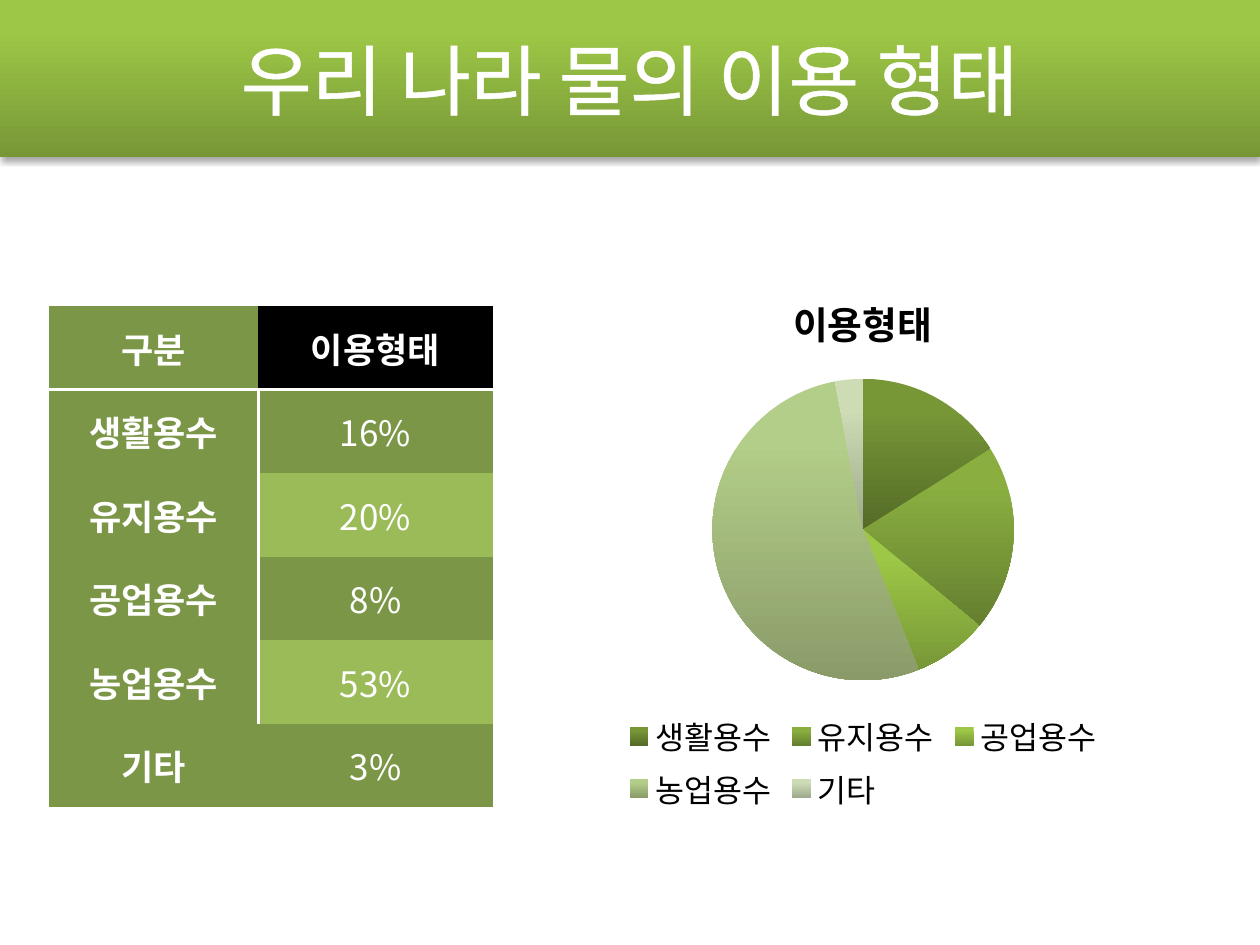
from dataclasses import dataclass

import pptx
import pptx.chart.data
import pptx.dml.color
import pptx.enum.chart
import pptx.enum.shapes
import pptx.enum.text
import pptx.oxml
import pptx.oxml.ns
import pptx.util
from pptx.util import Inches

FONT = "Noto Sans CJK KR"
PLAIN_TABLE = "{2D5ABB26-0587-4C30-8999-92F81FD0307C}"
NS = pptx.oxml.ns.nsdecls("a")
COLORS = {
    "white": "FFFFFF",
    "black": "000000",
    "banner_top": "9DC746",
    "olive": "7C9647",
    "band": "9BBB59",
    "banner_bottom": "779737",
}


@dataclass(frozen=True)
class WaterUse:
    name: str
    percent: int
    top_color: str
    bottom_color: str


USES = [
    WaterUse("생활용수", 16, "779737", "556B27"),
    WaterUse("유지용수", 20, "8AAF40", "657F30"),
    WaterUse("공업용수", 8, "9DC746", "779737"),
    WaterUse("농업용수", 53, "B3CE88", "8A9B69"),
    WaterUse("기타", 3, "CDDCB5", "9EAA8C"),
]


def rgb(value: str) -> pptx.dml.color.RGBColor:
    """Turn a hex string into a colour."""
    return pptx.dml.color.RGBColor.from_string(value)


def style_font(font, size: float, color: str, bold: bool = False) -> None:
    """Set size, colour and weight of a font."""
    font.size = pptx.util.Pt(size)
    font.bold = bold
    font.name = FONT
    font.color.rgb = rgb(color)


def add_run(paragraph, text: str, size: float, color: str, bold: bool = False):
    """Add a centred run with Latin and East Asian fonts."""
    paragraph.alignment = pptx.enum.text.PP_ALIGN.CENTER
    run = paragraph.add_run()
    run.text = text
    style_font(run.font, size, color, bold)
    latin = run.font._element.find(pptx.oxml.ns.qn("a:latin"))
    latin.addnext(pptx.oxml.parse_xml(f'<a:ea {NS} typeface="{FONT}"/>'))
    return run


def fill_downward(fill, top: str, bottom: str) -> None:
    """Fill with a gradient that runs from top to bottom."""
    fill.gradient()
    fill.gradient_angle = 270
    start, end = fill.gradient_stops
    start.color.rgb, end.color.rgb = rgb(top), rgb(bottom)
    start.position, end.position = 0.2, 1


def add_banner(slide) -> None:
    """Draw the shaded banner and the slide title."""
    banner = slide.shapes.add_shape(
        pptx.enum.shapes.MSO_SHAPE.RECTANGLE, 0, 0, Inches(10), Inches(1.25))
    fill_downward(banner.fill, COLORS["banner_top"], COLORS["banner_bottom"])
    banner.line.fill.background()
    banner.shadow.inherit = False
    effects = banner._element.spPr.find(pptx.oxml.ns.qn("a:effectLst"))
    effects.append(pptx.oxml.parse_xml(
        f'<a:outerShdw {NS} blurRad="40000" dist="23000" dir="5400000" rotWithShape="0">'
        f'<a:srgbClr val="{COLORS["black"]}"><a:alpha val="35000"/></a:srgbClr></a:outerShdw>'))

    title = slide.shapes.add_textbox(Inches(0.5), 0, Inches(9), Inches(1.25)).text_frame
    title.word_wrap = True
    title.vertical_anchor = pptx.enum.text.MSO_ANCHOR.MIDDLE
    run = add_run(title.paragraphs[0], "우리 나라 물의 이용 형태", 44, COLORS["white"])
    run.font._element.insert(0, line_xml("ln", 1.45))


def line_xml(tag: str, points: float):
    """Build a white line element."""
    width = int(pptx.util.Pt(points))
    return pptx.oxml.parse_xml(
        f'<a:{tag} {NS} w="{width}"><a:solidFill>'
        f'<a:srgbClr val="{COLORS["white"]}"/></a:solidFill></a:{tag}>')


def cell_color(row: int, column: int) -> str:
    """Give the fill of a table cell."""
    if column == 0:
        return COLORS["olive"]
    if row == 0:
        return COLORS["black"]
    return COLORS["olive" if row % 2 else "band"]


def add_use_table(slide) -> None:
    """Draw the table of water use shares."""
    rows = [("구분", "이용형태")] + [(use.name, f"{use.percent}%") for use in USES]
    frame = slide.shapes.add_table(
        len(rows), 2, Inches(0.39), Inches(2.43), Inches(3.52), Inches(3.98))
    table = frame.table
    table._tbl.tblPr.find(pptx.oxml.ns.qn("a:tableStyleId")).text = PLAIN_TABLE
    for column, width in zip(table.columns, (1.66, 1.86)):
        column.width = Inches(width)
    for row, texts in enumerate(rows):
        for column, text in enumerate(texts):
            cell = table.cell(row, column)
            cell.vertical_anchor = pptx.enum.text.MSO_ANCHOR.MIDDLE
            add_run(cell.text_frame.paragraphs[0], text, 20, COLORS["white"],
                    bold=row == 0 or column == 0)
            properties = cell._tc.get_or_add_tcPr()
            if column == 0 and 0 < row < len(rows) - 1:
                properties.append(line_xml("lnR", 2))
            if row == 0:
                properties.append(line_xml("lnB", 2))
            cell.fill.solid()
            cell.fill.fore_color.rgb = rgb(cell_color(row, column))


def add_use_chart(slide) -> None:
    """Draw the pie chart of water use shares."""
    data = pptx.chart.data.CategoryChartData()
    data.categories = [use.name for use in USES]
    data.add_series("이용형태", [use.percent for use in USES])
    chart = slide.shapes.add_chart(
        pptx.enum.chart.XL_CHART_TYPE.PIE,
        Inches(4.14), Inches(2.11), Inches(5.42), Inches(4.38), data).chart
    style_font(chart.font, 18, COLORS["black"])
    chart.has_title = True
    add_run(chart.chart_title.text_frame.paragraphs[0], "이용형태", 21.6,
            COLORS["black"], bold=True)
    chart.chart_title.include_in_layout = False
    chart.has_legend = True
    chart.legend.position = pptx.enum.chart.XL_LEGEND_POSITION.BOTTOM
    chart.legend.include_in_layout = False
    plot = chart.plots[0]
    plot.vary_by_categories = True
    for index, use in enumerate(USES):
        slice_format = plot.series[0].points[index].format
        fill_downward(slice_format.fill, use.top_color, use.bottom_color)
        slice_format.line.fill.background()


def main() -> None:
    """Build and save the slide."""
    deck = pptx.Presentation()
    deck.slide_width, deck.slide_height = Inches(10), Inches(7.5)
    slide = deck.slides.add_slide(deck.slide_layouts[6])
    add_banner(slide)
    add_use_table(slide)
    add_use_chart(slide)
    deck.save("out.pptx")


if __name__ == "__main__":
    main()
